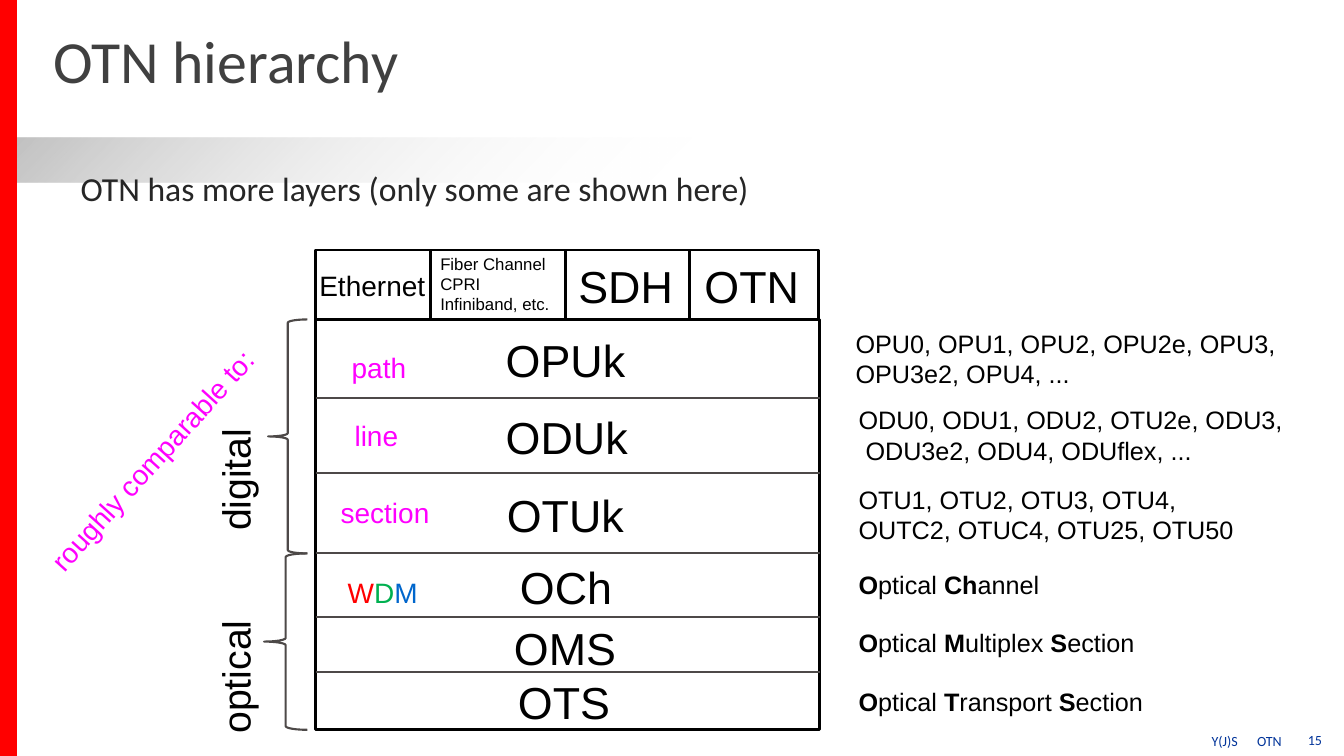
from itertools import pairwise

from lxml import etree
from pptx import Presentation
from pptx.dml.color import RGBColor
from pptx.enum.shapes import MSO_CONNECTOR, MSO_SHAPE
from pptx.enum.text import MSO_ANCHOR, MSO_AUTO_SIZE, PP_ALIGN
from pptx.oxml import parse_xml
from pptx.oxml.ns import nsdecls, qn
from pptx.util import Pt

COLORS = {
    "black": "000000", "white": "FFFFFF", "rule": "4D4948",
    "title": "404040", "body": "262626", "footer": "003399",
    "magenta": "FF00FF", "accent": "FF0000", "band": "BFBFBF",
    "green": "00B050", "blue": "0066CC",
}

STACK_LEFT, STACK_TOP, STACK_WIDTH, STACK_BOTTOM = 225.4, 228.2, 360, 521.3
DIVIDERS = [284.4, 337.7, 395.3, 440.6, 480.2]
CLIENT_TOP = 178.6
CLIENT_EDGES = [225.4, 307.6, 404, 492.5, 584.7]

# Plain labels: lines, frame, size, color, rotation
LABELS = [
    (["Ethernet"], (221, 187.9, 98, 31.7), 20, "black", 0),
    (["Fiber Channel", "CPRI", "Infiniband, etc."],
     (307.4, 177.1, 98, 51.1), 12, "black", 0),
    (["SDH"], (406.1, 180.7, 86.4, 46), 32, "black", 0),
    (["OTN"], (496.1, 180.7, 86.4, 46), 32, "black", 0),
    (["OPUk"], (354.2, 239.8, 103, 34.6), 32, "black", 0),
    (["ODUk"], (354.2, 294.5, 103, 34.6), 32, "black", 0),
    (["OTUk"], (355, 350.6, 100, 34.6), 32, "black", 0),
    (["OCh"], (364.3, 401.8, 81.4, 34.6), 32, "black", 0),
    (["OMS"], (360, 439.2, 90, 46), 32, "black", 0),
    (["OTS"], (362.9, 478.1, 85.7, 46), 32, "black", 0),
    (["path"], (244.1, 246.2, 64.1, 31.7), 20, "magenta", 0),
    (["line"], (246.2, 295.2, 46.1, 31.7), 20, "magenta", 0),
    (["section"], (236.2, 350, 103, 31.7), 20, "magenta", 0),
    (["digital"], (110.2, 308.2, 115.2, 41), 28, "black", 270),
    (["optical"], (110.2, 452.9, 115.2, 41), 28, "black", 270),
    (["roughly comparable to:"],
     (-7.9, 295.9, 263.5, 31.7), 20, "magenta", 312.2),
    (["OPU0, OPU1, OPU2, OPU2e, OPU3, OPU3e2, OPU4, ..."],
     (604.1, 230.4, 321.8, 51.1), 18, "black", 0),
    (["OTU1, OTU2, OTU3, OTU4,", "OUTC2, OTUC4, OTU25, OTU50"],
     (606.2, 342, 330.5, 51.1), 18, "black", 0),
]

# Optical layer names, bold and plain parts in turn
OPTICAL_NAMES = [
    (403.2, ["O", "ptical ", "Ch", "annel"]),
    (444.2, ["O", "ptical ", "M", "ultiplex ", "S", "ection"]),
    (486.7, ["O", "ptical ", "T", "ransport ", "S", "ection"]),
]


def color(name):
    return RGBColor.from_string(COLORS[name])


def add_span(para, text, size, tint="black", font="Arial", bold=None):
    span = para.add_run()
    span.text = text
    span.font.size = Pt(size)
    span.font.name = font
    span.font.bold = bold
    span.font.color.rgb = color(tint)


def add_box(page, frame, rotation=0, anchor=MSO_ANCHOR.MIDDLE):
    box = page.shapes.add_textbox(*map(Pt, frame))
    box.rotation = rotation
    box.text_frame.word_wrap = True
    box.text_frame.vertical_anchor = anchor
    return box.text_frame


def add_label(page, lines, frame, size, tint, rotation):
    text_frame = add_box(page, frame, rotation)
    for i, line in enumerate(lines):
        para = text_frame.add_paragraph() if i else text_frame.paragraphs[0]
        add_span(para, line, size, tint)
    return text_frame


def set_indent(para, left):
    """Hang the first line back to the edge of the box."""
    props = para._p.get_or_add_pPr()
    props.set("marL", str(Pt(left)))
    props.set("indent", str(Pt(-left)))
    return props


def add_shape(page, kind, frame, fill=None, line=None, width=2):
    shape = page.shapes.add_shape(kind, *map(Pt, frame))
    shape.shadow.inherit = False
    if fill:
        shape.fill.solid()
        shape.fill.fore_color.rgb = color(fill)
    else:
        shape.fill.background()
    if line:
        shape.line.color.rgb = color(line)
        shape.line.width = Pt(width)
    else:
        shape.line.fill.background()
    return shape


def add_divider(page, y):
    divider = page.shapes.add_connector(
        MSO_CONNECTOR.STRAIGHT, Pt(STACK_LEFT), Pt(y),
        Pt(STACK_LEFT + STACK_WIDTH), Pt(y))
    divider.line.color.rgb = color("rule")
    divider.line.width = Pt(1.5)
    etree.SubElement(divider.element.spPr, qn("a:effectLst"))


def fade_out(shape):
    """Replace the fill by a gradient that ends transparent."""
    old = shape.element.spPr.find(qn("a:noFill"))
    gradient = parse_xml(
        f'<a:gradFill {nsdecls("a")}><a:gsLst>'
        f'<a:gs pos="0"><a:srgbClr val="{COLORS["band"]}"/></a:gs>'
        f'<a:gs pos="50000"><a:srgbClr val="{COLORS["white"]}">'
        '<a:alpha val="0"/></a:srgbClr></a:gs>'
        '</a:gsLst><a:lin ang="2700000" scaled="0"/></a:gradFill>')
    old.getparent().replace(old, gradient)


def place(holder, frame):
    holder.left, holder.top, holder.width, holder.height = map(Pt, frame)
    holder.text_frame.auto_size = MSO_AUTO_SIZE.NONE
    return holder.text_frame


def add_heading(page):
    title = place(page.shapes.title, (38.2, 15.8, 726.5, 61.9))
    title.vertical_anchor = MSO_ANCHOR.MIDDLE
    title.margin_left = title.margin_right = 0
    title.margin_top = title.margin_bottom = 0
    para = title.paragraphs[0]
    para.alignment = PP_ALIGN.LEFT
    para.line_spacing = 0.85
    add_span(para, "OTN hierarchy", 42.7, "title", "Calibri")

    body = place(page.placeholders[1], (50.4, 113.8, 823, 36.7))
    para = body.paragraphs[0]
    para.line_spacing = 1.1
    para.space_before = Pt(0)
    etree.SubElement(set_indent(para, 36), qn("a:buNone"))
    add_span(para, "OTN has more layers (only some are shown here)",
             24, "body", "Calibri")


def add_background(page):
    band = add_shape(page, MSO_SHAPE.RECTANGLE, (0, 98.6, 960, 31.7))
    fade_out(band)
    bar = add_shape(page, MSO_SHAPE.RECTANGLE, (0, 0, 12.2, 540), "accent")
    for shape in (band, bar):
        page.shapes.title.element.addprevious(shape.element)


def add_footer(page):
    for text, frame in (("Y(J)S\tOTN", (856.1, 518.4, 87.8, 21.6)),
                        ("15", (919.4, 517.7, 39.6, 21.6))):
        text_frame = add_box(page, frame, anchor=MSO_ANCHOR.TOP)
        text_frame.margin_left = text_frame.margin_right = Pt(9.4)
        text_frame.margin_top = text_frame.margin_bottom = Pt(5)
        para = text_frame.paragraphs[0]
        if "\t" in text:
            tabs = etree.SubElement(para._p.get_or_add_pPr(), qn("a:tabLst"))
            etree.SubElement(tabs, qn("a:tab"), pos=str(Pt(32.4)), algn="l")
        else:
            para.alignment = PP_ALIGN.CENTER
        add_span(para, text, 10, "footer", "Calibri")


def main():
    deck = Presentation()
    deck.slide_width, deck.slide_height = Pt(960), Pt(540)
    page = deck.slides.add_slide(deck.slide_layouts[1])
    add_heading(page)
    add_background(page)
    add_footer(page)

    # Layer stack, client row and braces
    add_shape(page, MSO_SHAPE.RECTANGLE,
              (STACK_LEFT, STACK_TOP, STACK_WIDTH, STACK_BOTTOM - STACK_TOP),
              "white", "black")
    for y in DIVIDERS:
        add_divider(page, y)
    for left, right in pairwise(CLIENT_EDGES):
        add_shape(page, MSO_SHAPE.RECTANGLE,
                  (left, CLIENT_TOP, right - left, STACK_TOP - CLIENT_TOP),
                  "white", "black")
    digital_end = DIVIDERS[2]
    for left, width, top, bottom in ((191.5, 28.1, STACK_TOP, digital_end),
                                     (188.6, 31, digital_end, STACK_BOTTOM)):
        add_shape(page, MSO_SHAPE.LEFT_BRACE,
                  (left, top, width, bottom - top), None, "rule", 1.5)

    # Labels
    for label in LABELS:
        add_label(page, *label)
    odu = add_label(
        page, ["ODU0, ODU1, ODU2, OTU2e, ODU3, ODU3e2, ODU4, ODUflex, ..."],
        (606.2, 285.1, 321.8, 51.1), 18, "black", 0)
    set_indent(odu.paragraphs[0], 5)
    wdm = add_box(page, (241.2, 407.5, 103, 31.7)).paragraphs[0]
    for letter, tint in zip("WDM", ("accent", "green", "blue")):
        add_span(wdm, letter, 20, tint)
    for top, parts in OPTICAL_NAMES:
        para = add_box(page, (606.2, top, 330.5, 28.8)).paragraphs[0]
        for i, part in enumerate(parts):
            add_span(para, part, 18, bold=i % 2 == 0)

    deck.save("out.pptx")


if __name__ == "__main__":
    main()
